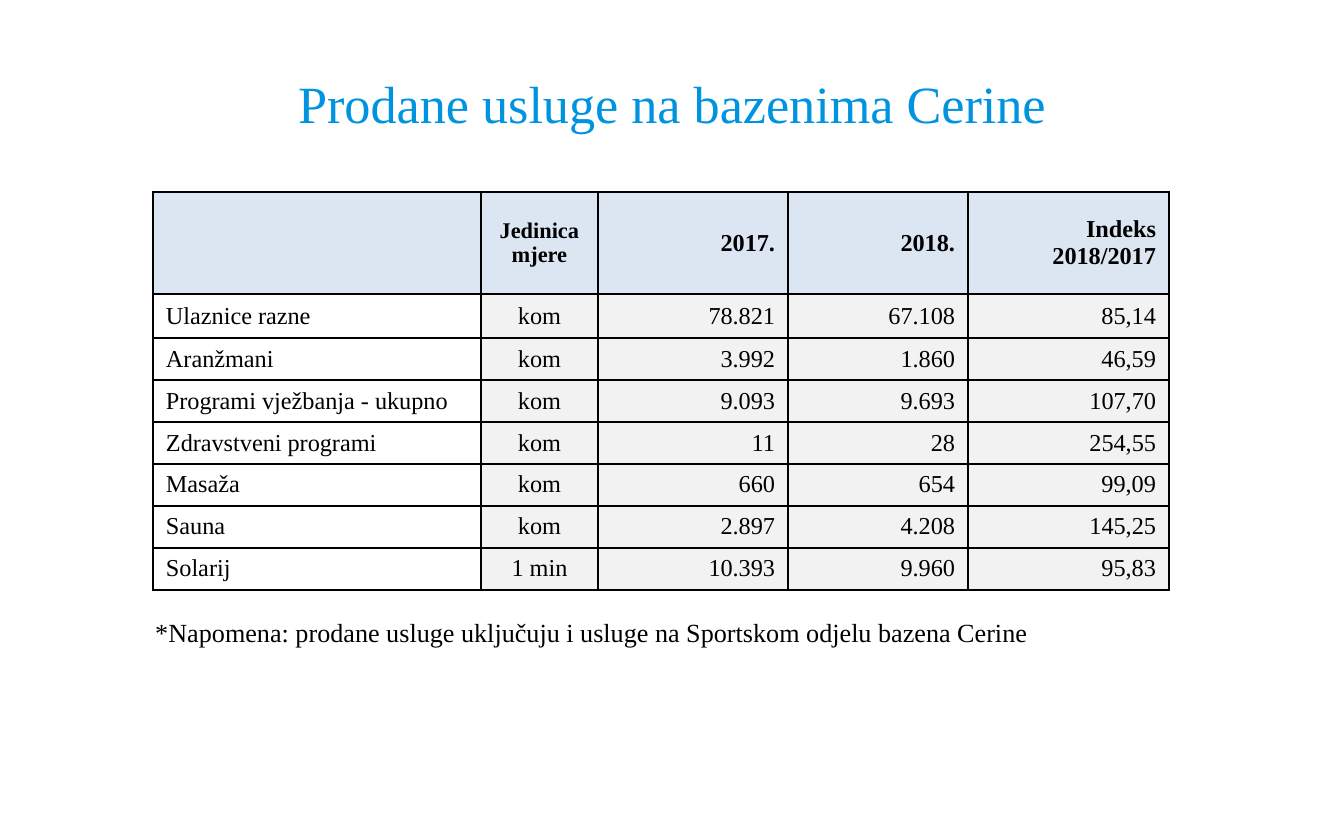
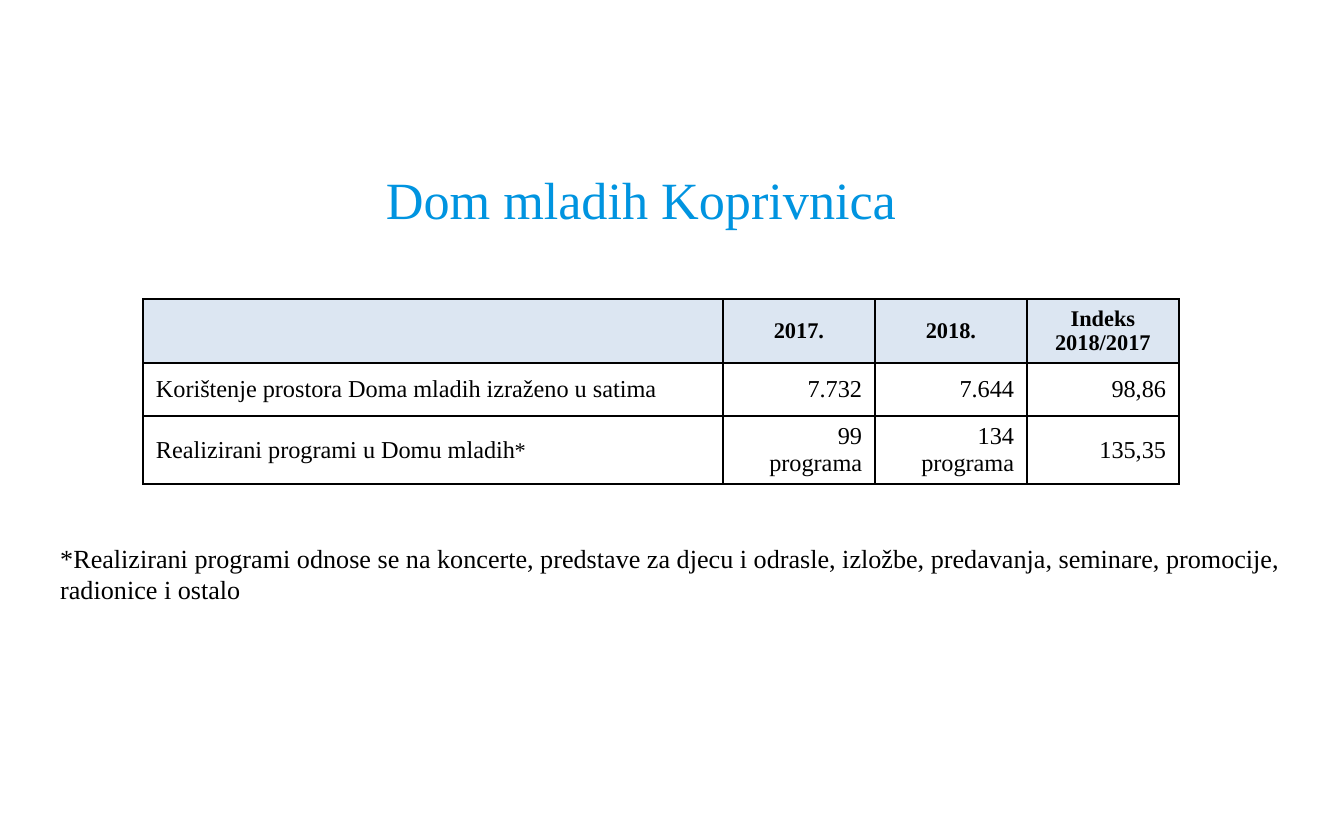
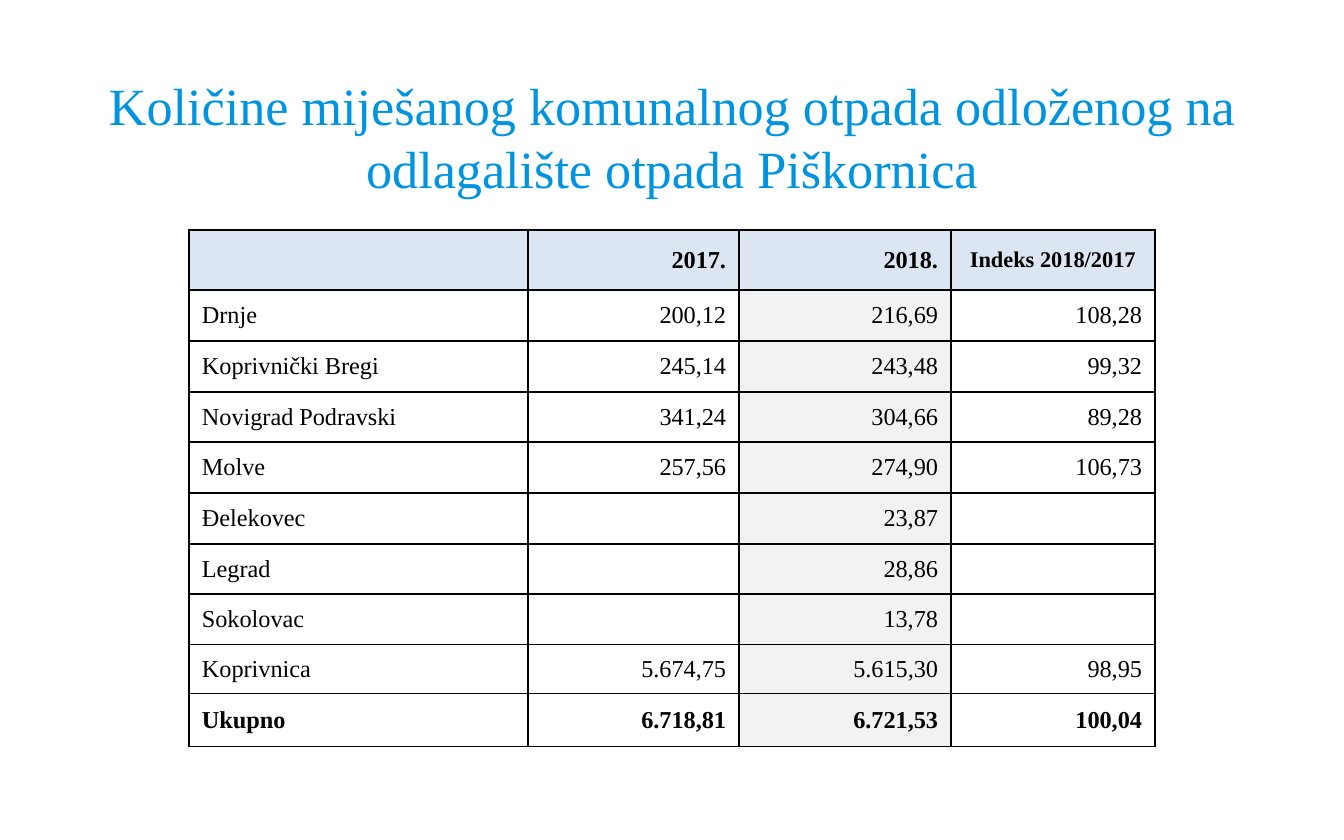
from lxml import etree
from pptx import Presentation
from pptx.dml.color import RGBColor
from pptx.enum.text import MSO_ANCHOR, PP_ALIGN
from pptx.oxml.ns import qn
from pptx.util import Emu, Pt

EMU_PER_PX = 914400 / 134.4
FONT = "Times New Roman"
COLORS = {
    "title": "0094E0",
    "text": "000000",
    "border": "000000",
    "header": "DCE6F2",
    "shade": "F2F2F2",
}
LEFT, CENTER, RIGHT = PP_ALIGN.LEFT, PP_ALIGN.CENTER, PP_ALIGN.RIGHT
TOP, MIDDLE = MSO_ANCHOR.TOP, MSO_ANCHOR.MIDDLE
BORDER_TAGS = ("a:lnL", "a:lnR", "a:lnT", "a:lnB")
BORDER_WIDTH = Pt(1)
BODY_SIZE = 13

POOL_ROWS = [
    ("", "Jedinica mjere", "2017.", "2018.", "Indeks 2018/2017"),
    ("Ulaznice razne", "kom", "78.821", "67.108", "85,14"),
    ("Aranžmani", "kom", "3.992", "1.860", "46,59"),
    ("Programi vježbanja - ukupno", "kom", "9.093", "9.693", "107,70"),
    ("Zdravstveni programi", "kom", "11", "28", "254,55"),
    ("Masaža", "kom", "660", "654", "99,09"),
    ("Sauna", "kom", "2.897", "4.208", "145,25"),
    ("Solarij", "1 min", "10.393", "9.960", "95,83"),
]
YOUTH_CENTRE_ROWS = [
    ("", "2017.", "2018.", "Indeks 2018/2017"),
    ("Korištenje prostora Doma mladih izraženo u satima", "7.732", "7.644", "98,86"),
    ("Realizirani programi u Domu mladih", "99\vprograma", "134\vprograma", "135,35"),
]
WASTE_ROWS = [
    ("", "2017.", "2018.", "Indeks 2018/2017"),
    ("Drnje", "200,12", "216,69", "108,28"),
    ("Koprivnički Bregi", "245,14", "243,48", "99,32"),
    ("Novigrad Podravski", "341,24", "304,66", "89,28"),
    ("Molve", "257,56", "274,90", "106,73"),
    ("Đelekovec", "", "23,87", ""),
    ("Legrad", "", "28,86", ""),
    ("Sokolovac", "", "13,78", ""),
    ("Koprivnica", "5.674,75", "5.615,30", "98,95"),
    ("Ukupno", "6.718,81", "6.721,53", "100,04"),
]


def px(length):
    """Turn a length in px into EMU."""
    return Emu(round(length * EMU_PER_PX))


def write_text(paragraph, text, size=BODY_SIZE, color="text", bold=False, align=LEFT):
    """Append formatted text to a paragraph, breaking lines at vertical tabs."""
    paragraph.alignment = align
    for index, line in enumerate(text.split("\v")):
        if index:
            paragraph.add_line_break()
        run = paragraph.add_run()
        run.text = line
        run.font.name = FONT
        run.font.size = Pt(size)
        run.font.bold = bold
        run.font.color.rgb = RGBColor.from_string(COLORS[color])


def add_text_box(slide, box, text, anchor=MIDDLE, **text_format):
    """Add a wrapping text box with one paragraph."""
    text_frame = slide.shapes.add_textbox(*map(px, box)).text_frame
    text_frame.word_wrap = True
    text_frame.vertical_anchor = anchor
    write_text(text_frame.paragraphs[0], text, **text_format)


def add_title(slide, box, text):
    """Add the centred blue slide title."""
    add_text_box(slide, box, text, size=28, color="title", align=CENTER)


def add_note(slide, box, text, anchor=MIDDLE):
    """Add a note below a table."""
    add_text_box(slide, box, text, anchor=anchor, size=14)


def set_borders(cell):
    """Draw a thin line on all four sides of a cell."""
    properties = cell._tc.get_or_add_tcPr()
    for index, tag in enumerate(BORDER_TAGS):
        line = etree.Element(qn(tag), w=str(BORDER_WIDTH))
        fill = etree.SubElement(line, qn("a:solidFill"))
        etree.SubElement(fill, qn("a:srgbClr"), val=COLORS["border"])
        properties.insert(index, line)


def format_cell(cell, fill_color):
    """Set the margins, anchor, fill and borders of a cell."""
    cell.margin_left = cell.margin_right = px(13)
    cell.margin_top = cell.margin_bottom = px(5)
    cell.vertical_anchor = MIDDLE
    if fill_color:
        cell.fill.solid()
        cell.fill.fore_color.rgb = RGBColor.from_string(COLORS[fill_color])
    else:
        cell.fill.background()
    set_borders(cell)


def add_data_table(slide, left, top, widths, heights, rows, aligns,
                   header_aligns, header_sizes, shaded_columns=(), total_row=None):
    """Add a bordered table with a tinted header row and return it."""
    frame = slide.shapes.add_table(
        len(rows), len(widths), px(left), px(top), px(sum(widths)), px(sum(heights)))
    table = frame.table
    table.first_row = table.horz_banding = False
    for column, width in zip(table.columns, widths):
        column.width = px(width)
    for row, height in zip(table.rows, heights):
        row.height = px(height)
    for row_index, values in enumerate(rows):
        is_header = row_index == 0
        for column_index, value in enumerate(values):
            cell = table.cell(row_index, column_index)
            shade = "shade" if column_index in shaded_columns else None
            format_cell(cell, "header" if is_header else shade)
            write_text(
                cell.text_frame.paragraphs[0], value,
                size=header_sizes[column_index] if is_header else BODY_SIZE,
                bold=is_header or row_index == total_row,
                align=(header_aligns if is_header else aligns)[column_index])
    return table


def build_pool_slide(slide):
    """Build the slide on services sold at the pools."""
    add_title(slide, (67, 50, 1210, 106), "Prodane usluge na bazenima Cerine")
    aligns = [LEFT, CENTER, RIGHT, RIGHT, RIGHT]
    add_data_table(
        slide, 153, 192, [328, 117, 190, 180, 201], [102, 44] + [42] * 6, POOL_ROWS,
        aligns, aligns, [13, 12, 13, 13, 13], shaded_columns=range(1, 5))
    add_note(slide, (142, 610, 1058, 46),
             "*Napomena: prodane usluge uključuju i usluge na Sportskom odjelu bazena Cerine",
             anchor=TOP)


def build_youth_centre_slide(slide):
    """Build the slide on the use of the youth centre."""
    add_title(slide, (68, 124, 1146, 150), "Dom mladih Koprivnica")
    table = add_data_table(
        slide, 143, 299, [580] + [152] * 3, [63, 53, 64], YOUTH_CENTRE_ROWS,
        [LEFT] + [RIGHT] * 3, [LEFT] + [CENTER] * 3, [12] * 4)
    write_text(table.cell(2, 0).text_frame.paragraphs[0], "*", size=12)
    add_note(slide, (47, 515, 1270, 117),
             "*Realizirani programi odnose se na koncerte, predstave za djecu i odrasle, "
             "izložbe, predavanja, seminare, promocije, radionice i ostalo")


def build_waste_slide(slide):
    """Build the slide on landfilled mixed municipal waste."""
    add_title(slide, (67, 61, 1210, 150),
              "Količine miješanog komunalnog otpada odloženog na odlagalište otpada Piškornica")
    add_data_table(
        slide, 189, 230, [339, 211, 212, 204],
        [60, 51, 51, 50, 51, 51, 50, 50, 49, 53], WASTE_ROWS,
        [LEFT] + [RIGHT] * 3, [LEFT, RIGHT, RIGHT, CENTER], [13, 13, 13, 12],
        shaded_columns=[2], total_row=len(WASTE_ROWS) - 1)


def main():
    """Build the presentation and save it."""
    presentation = Presentation()
    presentation.slide_width = px(1344)
    presentation.slide_height = px(840)
    blank_layout = presentation.slide_layouts[6]
    for build_slide in (build_pool_slide, build_youth_centre_slide, build_waste_slide):
        build_slide(presentation.slides.add_slide(blank_layout))
    presentation.save("out.pptx")


if __name__ == "__main__":
    main()
